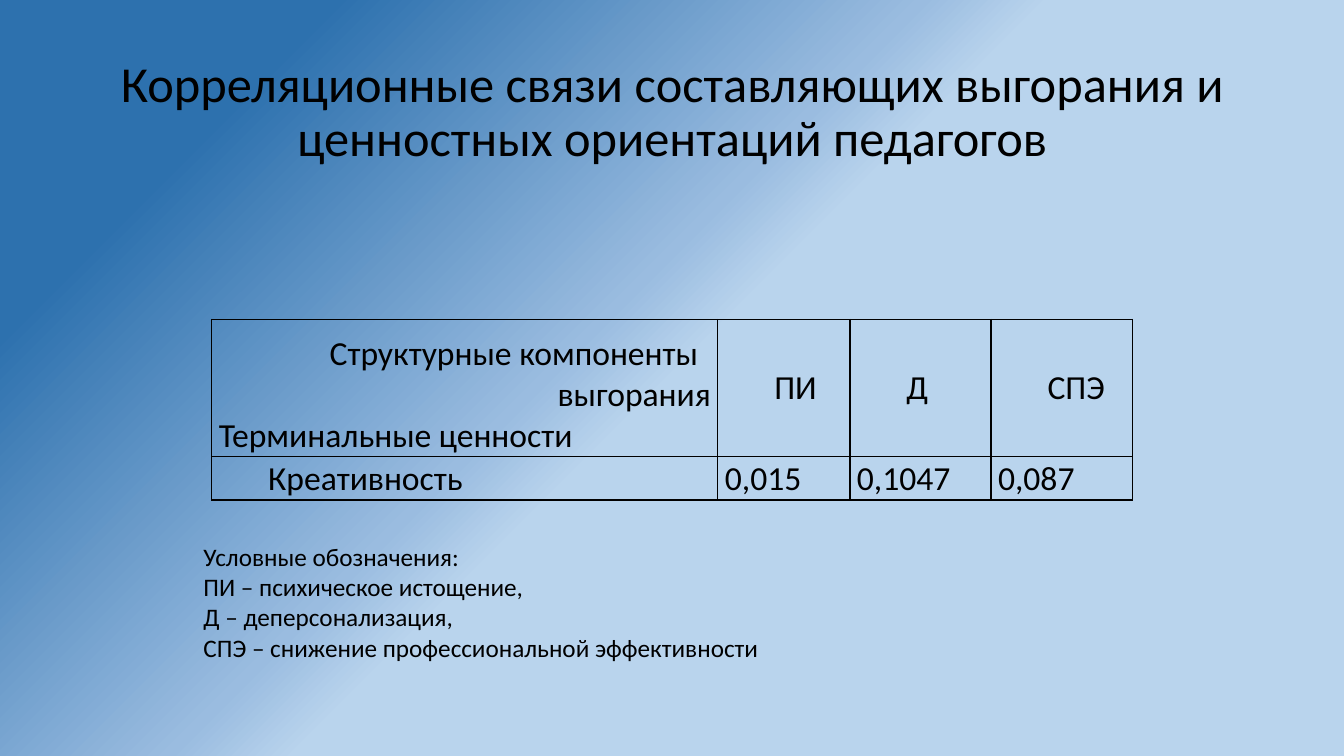
from copy import deepcopy

from pptx import Presentation
from pptx.dml.color import RGBColor
from pptx.enum import text as t
from pptx.oxml import parse_xml
from pptx.oxml.ns import nsdecls, qn
from pptx.util import Inches, Pt

BLACK = RGBColor(0x00, 0x00, 0x00)
LIGHT = RGBColor(0xB9, 0xD4, 0xED)
MIDDLE = RGBColor(0x9A, 0xBC, 0xE0)
DARK = RGBColor(0x2D, 0x71, 0xAE)

BACKGROUND = [(0.50, LIGHT), (0.56, MIDDLE), (0.84, DARK)]
INDENT = 0.49
LEFT, CENTER, RIGHT = t.PP_ALIGN.LEFT, t.PP_ALIGN.CENTER, t.PP_ALIGN.RIGHT
MIDDLE_ANCHOR, BOTTOM_ANCHOR = t.MSO_ANCHOR.MIDDLE, t.MSO_ANCHOR.BOTTOM

TITLE = [("Корреляционные связи составляющих выгорания и ценностных ориентаций педагогов",
          CENTER, 0)]
LEGEND = [(line, LEFT, INDENT) for line in (
    "Условные обозначения:",
    "ПИ – психическое истощение,",
    "Д – деперсонализация,",
    "СПЭ – снижение профессиональной эффективности",
)]

# Each paragraph: text, alignment, first-line indent in inches
CORNER = [
    ("Структурные компоненты", LEFT, 1.1),
    ("выгорания", RIGHT, 0),
    ("Терминальные ценности", LEFT, 0),
]
COMPONENTS = ["ПИ", "Д", "СПЭ"]
VALUE_NAME = "Креативность"
CORRELATIONS = ["0,015", "0,1047", "0,087"]
COLUMN_WIDTHS = [5.02, 1.31, 1.4, 1.4]
ROW_HEIGHTS = [1.36, 0.43]

ROWS = [
    [(CORNER, BOTTOM_ANCHOR)]
    + [([(name, LEFT, INDENT)], MIDDLE_ANCHOR) for name in COMPONENTS],
    [([(VALUE_NAME, LEFT, INDENT)], BOTTOM_ANCHOR)]
    + [([(value, LEFT, 0)], BOTTOM_ANCHOR) for value in CORRELATIONS],
]


def set_format(target, values):
    for name, value in values.items():
        setattr(target, name, value)


def write(frame, paragraphs, size, spacing=1.0):
    frame.word_wrap = True
    for index, (words, align, indent) in enumerate(paragraphs):
        para = frame.paragraphs[0] if index == 0 else frame.add_paragraph()
        set_format(para, {"alignment": align, "line_spacing": spacing})
        para._p.get_or_add_pPr().set("indent", str(Inches(indent)))
        span = para.add_run()
        span.text = words
        set_format(span.font, {"name": "Calibri", "size": Pt(size), "bold": False})
        span.font.color.rgb = BLACK


def add_text(page, place, paragraphs, size, spacing=1.0, anchor=t.MSO_ANCHOR.TOP):
    box = page.shapes.add_textbox(*map(Inches, place))
    write(box.text_frame, paragraphs, size, spacing)
    box.text_frame.vertical_anchor = anchor


def paint_background(page):
    fill = page.background.fill
    fill.gradient()
    fill.gradient_angle = 135
    stop_list = next(page._element.iter(qn("a:gsLst")))
    stop_list.append(deepcopy(stop_list[0]))
    for stop, (position, color) in zip(fill.gradient_stops, BACKGROUND):
        stop.color.rgb = color
        stop.position = position


def add_borders(cell):
    properties = cell._tc.get_or_add_tcPr()
    for side in ("lnL", "lnR", "lnT", "lnB"):
        properties.append(parse_xml(
            f'<a:{side} {nsdecls("a")} w="{Pt(1)}"><a:solidFill>'
            f'<a:srgbClr val="{BLACK}"/></a:solidFill></a:{side}>'))


def add_correlations(page, left, top):
    table = page.shapes.add_table(
        len(ROWS), len(COLUMN_WIDTHS), Inches(left), Inches(top),
        Inches(sum(COLUMN_WIDTHS)), Inches(sum(ROW_HEIGHTS))).table
    set_format(table, {"first_row": False, "horz_banding": False})
    for column, width in zip(table.columns, COLUMN_WIDTHS):
        column.width = Inches(width)
    for row, height, contents in zip(table.rows, ROW_HEIGHTS, ROWS):
        row.height = Inches(height)
        for cell, (paragraphs, anchor) in zip(row.cells, contents):
            set_format(cell, {
                "margin_left": Inches(0.07), "margin_right": Inches(0.07),
                "margin_top": 0, "margin_bottom": 0, "vertical_anchor": anchor})
            write(cell.text_frame, paragraphs, 24)
            add_borders(cell)
            cell.fill.background()


def main():
    deck = Presentation()
    set_format(deck, {"slide_width": Inches(13.33), "slide_height": Inches(7.5)})
    page = deck.slides.add_slide(deck.slide_layouts[6])
    paint_background(page)
    add_text(page, (0.92, 0.4, 11.5, 1.45), TITLE, 36, 0.9, MIDDLE_ANCHOR)
    add_correlations(page, 2.1, 3.17)
    add_text(page, (1.43, 5.32, 9.97, 1.31), LEGEND, 18)
    deck.save("out.pptx")


if __name__ == "__main__":
    main()
